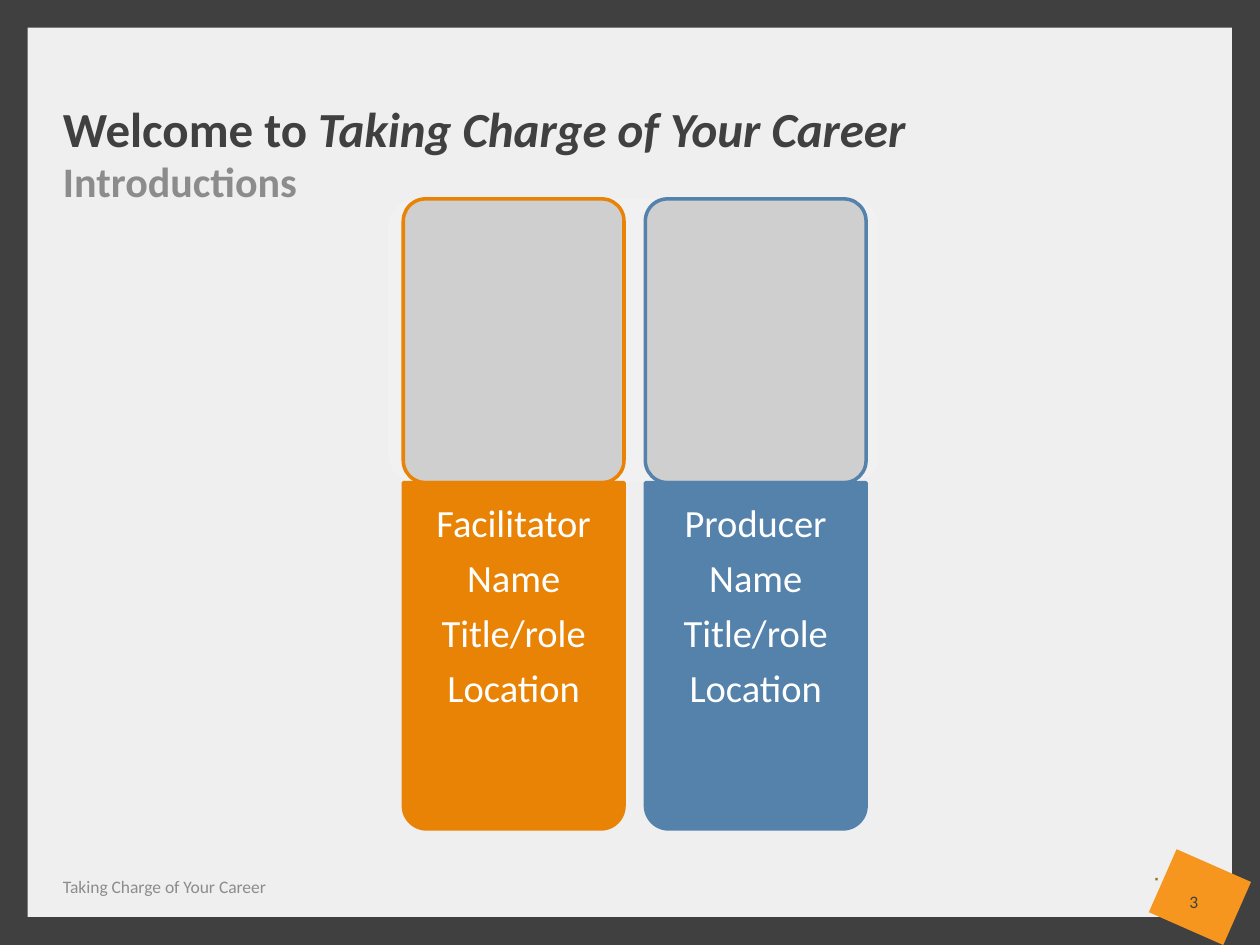
from lxml import etree
from pptx import Presentation
from pptx.dml.color import RGBColor
from pptx.enum import shapes, text
from pptx.oxml.ns import qn
from pptx.util import Cm, Pt

# Content
TITLE = [("Welcome to ", False), ("Taking Charge of Your Career", True)]
SUBTITLE = "Introductions"
FOOTER = "Taking Charge of Your Career"
PAGE = "3"
CARDS = [
    ("orange", ["Facilitator", "Name", "Title/role", "Location"]),
    ("blue", ["Producer", "Name", "Title/role", "Location"]),
]
COLORS = {
    "back": "EFEFEF", "dark": "404040", "gray": "8C8C8C", "white": "FFFFFF",
    "tag": "F7961E", "dot": "8B6E18", "band": "F2F2F2", "photo": "CFCFCF",
    "orange": "E98306", "blue": "5482AB",
}
FONT = "Calibri"

# Layout in centimetres
W, H, FRAME = 25.4, 19.05, 0.56
MARGIN = 1.27
CARD_X, CARD_Y, CARD_W, CARD_STEP = 8.13, 4.01, 4.45, 4.88
PHOTO_H, PANEL_H = 5.72, 6.98
TAG = [(23.72, 17.12), (25.22, 17.78), (24.66, 19.05), (23.16, 18.39)]

prs = Presentation()
prs.slide_width, prs.slide_height = Cm(W), Cm(H)
s = prs.slides.add_slide(prs.slide_layouts[6])


def rgb(name):
    return RGBColor.from_string(COLORS[name])


def paint(sp, fill, line=None):
    sp.shadow.inherit = False
    sp.fill.solid()
    sp.fill.fore_color.rgb = rgb(fill)
    if line:
        sp.line.color.rgb = rgb(line)
        sp.line.width = Pt(2)
    else:
        sp.line.fill.background()


def add_shape(kind, box, fill, line=None, adj=()):
    sp = s.shapes.add_shape(kind, *map(Cm, box))
    for i, value in enumerate(adj):
        sp.adjustments[i] = value
    paint(sp, fill, line)
    return sp


def add_text(box, paras, size, color, bold=False, align=text.PP_ALIGN.LEFT,
             anchor=text.MSO_ANCHOR.TOP, wrap=True, inset=0, spacing=None, after=0):
    """Each paragraph is a list of (text, italic) runs."""
    tf = s.shapes.add_textbox(*map(Cm, box)).text_frame
    tf.word_wrap, tf.vertical_anchor = wrap, anchor
    tf.margin_left = tf.margin_right = tf.margin_top = tf.margin_bottom = Cm(inset)
    for i, runs in enumerate(paras):
        p = tf.add_paragraph() if i else tf.paragraphs[0]
        p.alignment, p.line_spacing, p.space_after = align, spacing, Pt(after)
        p.font.name, p.font.size, p.font.bold = FONT, Pt(size), bold
        p.font.color.rgb = rgb(color)
        for words, italic in runs:
            r = p.add_run()
            r.text = words
            if italic:
                r.font.italic = True


# Background and frame
s.background.fill.solid()
s.background.fill.fore_color.rgb = rgb("back")
RECT = shapes.MSO_SHAPE.RECTANGLE
for box in [(0, 0, FRAME, H), (W - FRAME, 0, FRAME, H),
            (0, 0, W, FRAME), (0, H - FRAME, W, FRAME)]:
    add_shape(RECT, box, "dark")

# Page tag
fb = s.shapes.build_freeform(*[Cm(v) for v in TAG[0]])
fb.add_line_segments([(Cm(x), Cm(y)) for x, y in TAG[1:]], close=True)
paint(fb.convert_to_shape(), "tag")
add_shape(RECT, (23.29, 17.7, 0.05, 0.05), "dot")

# Headings and footer
BOTTOM, CENTER = text.MSO_ANCHOR.BOTTOM, text.PP_ALIGN.CENTER
add_text((MARGIN, 0.84, 22.86, 2.34), [TITLE], 28, "dark", bold=True,
         anchor=BOTTOM, spacing=0.9)
add_text((MARGIN, 3.25, 22.86, 0.91), [[(SUBTITLE, False)]], 24, "gray",
         bold=True, spacing=0.9)
add_text((MARGIN, 17.58, 11.46, 0.51), [[(FOOTER, False)]], 10, "gray",
         anchor=BOTTOM, wrap=False)
add_text((23.52, 17.88, 1.09, 0.51), [[(PAGE, False)]], 10, "dark",
         align=CENTER, anchor=BOTTOM, wrap=False)

# Pale band behind the photo frames
ROUND = shapes.MSO_SHAPE.ROUNDED_RECTANGLE
band = add_shape(ROUND, (7.82, CARD_Y, 9.91, PHOTO_H), "band", adj=[0.1])
clr = band.fill._xPr.find(qn("a:solidFill"))[0]
etree.SubElement(clr, qn("a:alpha")).set("val", "90000")

# Cards: photo frame above, name panel below
for i, (color, lines) in enumerate(CARDS):
    x, y = CARD_X + i * CARD_STEP, CARD_Y + PHOTO_H
    add_shape(ROUND, (x, CARD_Y, CARD_W, PHOTO_H), "photo", color, [0.1])
    panel = add_shape(shapes.MSO_SHAPE.ROUND_2_SAME_RECTANGLE,
                      (x, y, CARD_W, PANEL_H), color, color, [0.105, 0])
    panel.rotation = 180
    add_text((x + 0.14, y, CARD_W - 0.28, PANEL_H - 0.14),
             [[(line, False)] for line in lines], 22, "white",
             align=CENTER, inset=0.43, spacing=0.9, after=7.7)

prs.save("out.pptx")
